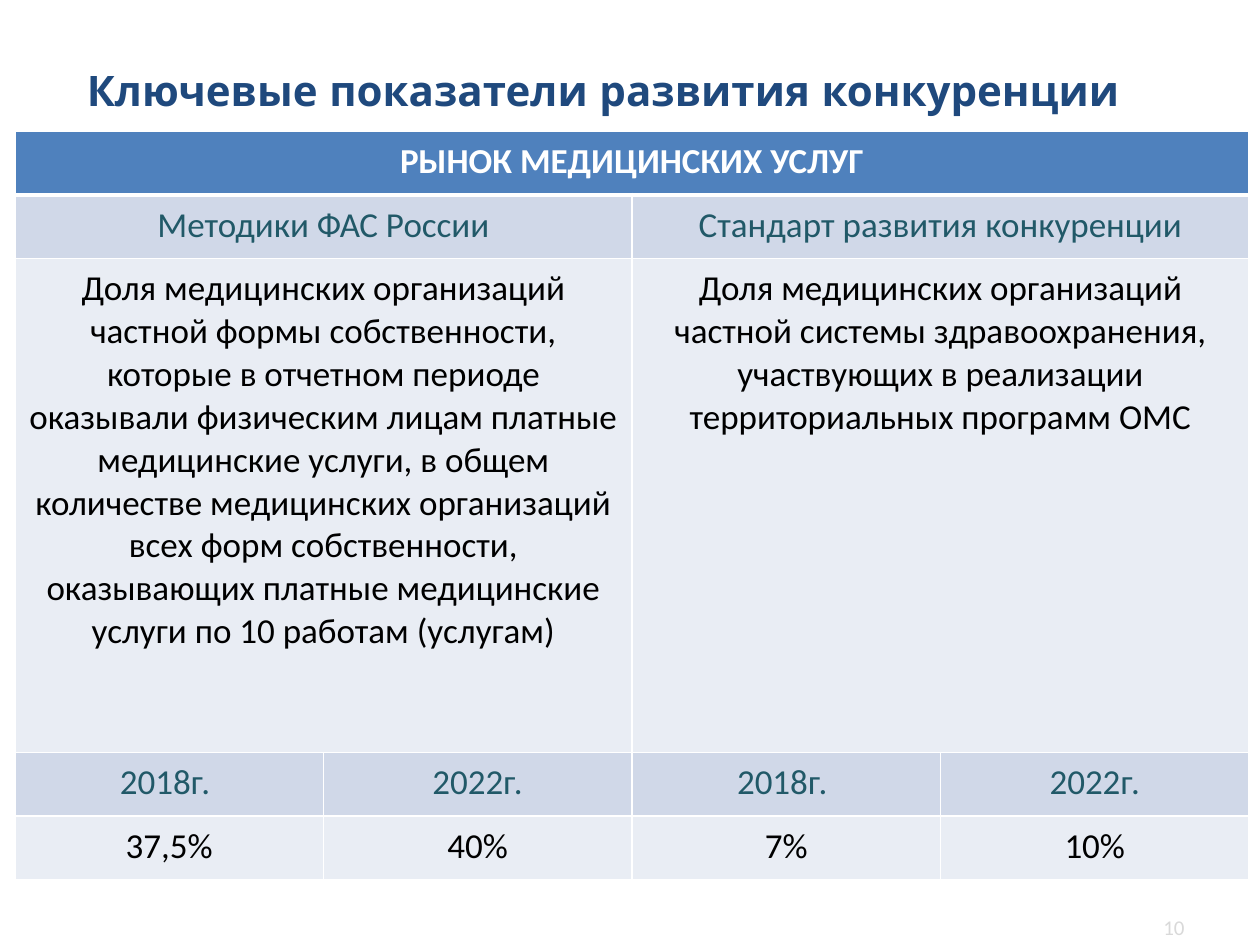
from dataclasses import dataclass

from lxml.etree import SubElement
from pptx import Presentation
from pptx.dml.color import RGBColor
from pptx.enum.text import MSO_ANCHOR as Anchor, PP_ALIGN as Align
from pptx.oxml.ns import qn
from pptx.util import Cm, Pt


@dataclass(frozen=True)
class Theme:
    title_font: str = "Quicksand"
    body_font: str = "Calibri"
    title_size: int = 24
    body_size: int = 20
    number_size: int = 12
    title: str = "1F497D"
    header: str = "4F81BD"
    band_dark: str = "D0D8E8"
    band_light: str = "E9EDF4"
    accent: str = "215968"
    text: str = "000000"
    white: str = "FFFFFF"
    muted: str = "D9D9D9"
    thin_border: int = 1
    thick_border: int = 3


class SlideBuilder:
    def __init__(self, slide, theme):
        self.slide = slide
        self.theme = theme

    def fill_text(self, frame, text, color, alignment, **font_format):
        """Put one formatted paragraph into a text frame."""
        paragraph = frame.paragraphs[0]
        paragraph.alignment = alignment
        run = paragraph.add_run()
        run.text = text
        for name, value in font_format.items():
            setattr(run.font, name, value)
        run.font.color.rgb = RGBColor.from_string(color)

    def text_box(self, box, text, color, alignment, **font_format):
        frame = self.slide.shapes.add_textbox(*map(Cm, box)).text_frame
        frame.word_wrap = True
        frame.vertical_anchor = Anchor.MIDDLE
        self.fill_text(frame, text, color, alignment, **font_format)

    def borders(self, cell, **widths):
        """Draw white cell edges; L, R, T and B give widths in points."""
        properties = cell._tc.get_or_add_tcPr()
        for side, width in widths.items():
            line = SubElement(properties, qn(f"a:ln{side}"), w=str(Pt(width)))
            fill = SubElement(line, qn("a:solidFill"))
            SubElement(fill, qn("a:srgbClr"), val=self.theme.white)

    def table(self, left, top, column_width, column_count, rows):
        """Each row is (height, fill, text colour, texts); texts share the width evenly."""
        theme = self.theme
        heights = [row[0] for row in rows]
        table = self.slide.shapes.add_table(
            len(rows), column_count, Cm(left), Cm(top),
            Cm(column_width * column_count), Cm(sum(heights))).table
        for column in table.columns:
            column.width = Cm(column_width)

        for index, (height, fill, color, texts) in enumerate(rows):
            table.rows[index].height = Cm(height)
            top_border = theme.thick_border if index == 1 else theme.thin_border
            bottom_border = theme.thick_border if index == 0 else theme.thin_border
            for cell in table.rows[index].cells:
                self.borders(cell, L=theme.thin_border, R=theme.thin_border,
                             T=top_border, B=bottom_border)
                cell.fill.solid()
                cell.fill.fore_color.rgb = RGBColor.from_string(fill)
                cell.margin_left = cell.margin_right = Cm(0.25)
                cell.margin_top = cell.margin_bottom = Cm(0.18)

            span = column_count // len(texts)
            for position, text in enumerate(texts):
                cell = table.cell(index, position * span)
                if span > 1:
                    cell.merge(table.cell(index, (position + 1) * span - 1))
                self.fill_text(cell.text_frame, text, color, Align.CENTER,
                               name=theme.body_font, size=Pt(theme.body_size),
                               bold=index == 0)


def main():
    presentation = Presentation()
    presentation.slide_width, presentation.slide_height = Cm(25.4), Cm(19.05)
    theme = Theme()
    builder = SlideBuilder(
        presentation.slides.add_slide(presentation.slide_layouts[6]), theme)

    # Title
    builder.text_box((1.5, 1.02, 22.86, 1.57),
                     "Ключевые показатели развития конкуренции",
                     theme.title, Align.LEFT, name=theme.title_font,
                     size=Pt(theme.title_size), bold=True)

    # Slide number
    builder.text_box((18.21, 18.19, 5.92, 1.02), "10", theme.muted, Align.RIGHT,
                     name=theme.body_font, size=Pt(theme.number_size))

    # Indicator table
    line_height, description_height = 1.28, 9.96
    builder.table(0.3, 2.65, 6.22, 4, [
        (line_height, theme.header, theme.white, ["РЫНОК МЕДИЦИНСКИХ УСЛУГ"]),
        (line_height, theme.band_dark, theme.accent,
         ["Методики ФАС России", "Стандарт развития конкуренции"]),
        (description_height, theme.band_light, theme.text, [
            "Доля медицинских организаций частной формы собственности, "
            "которые в отчетном периоде оказывали физическим лицам платные "
            "медицинские услуги, в общем количестве медицинских организаций "
            "всех форм собственности, оказывающих платные медицинские услуги "
            "по 10 работам (услугам)",
            "Доля медицинских организаций частной системы здравоохранения, "
            "участвующих в реализации территориальных программ ОМС"]),
        (line_height, theme.band_dark, theme.accent, ["2018г. ", "2022г."] * 2),
        (line_height, theme.band_light, theme.text, ["37,5%", "40%", "7%", "10%"]),
    ])

    presentation.save("out.pptx")


if __name__ == "__main__":
    main()
